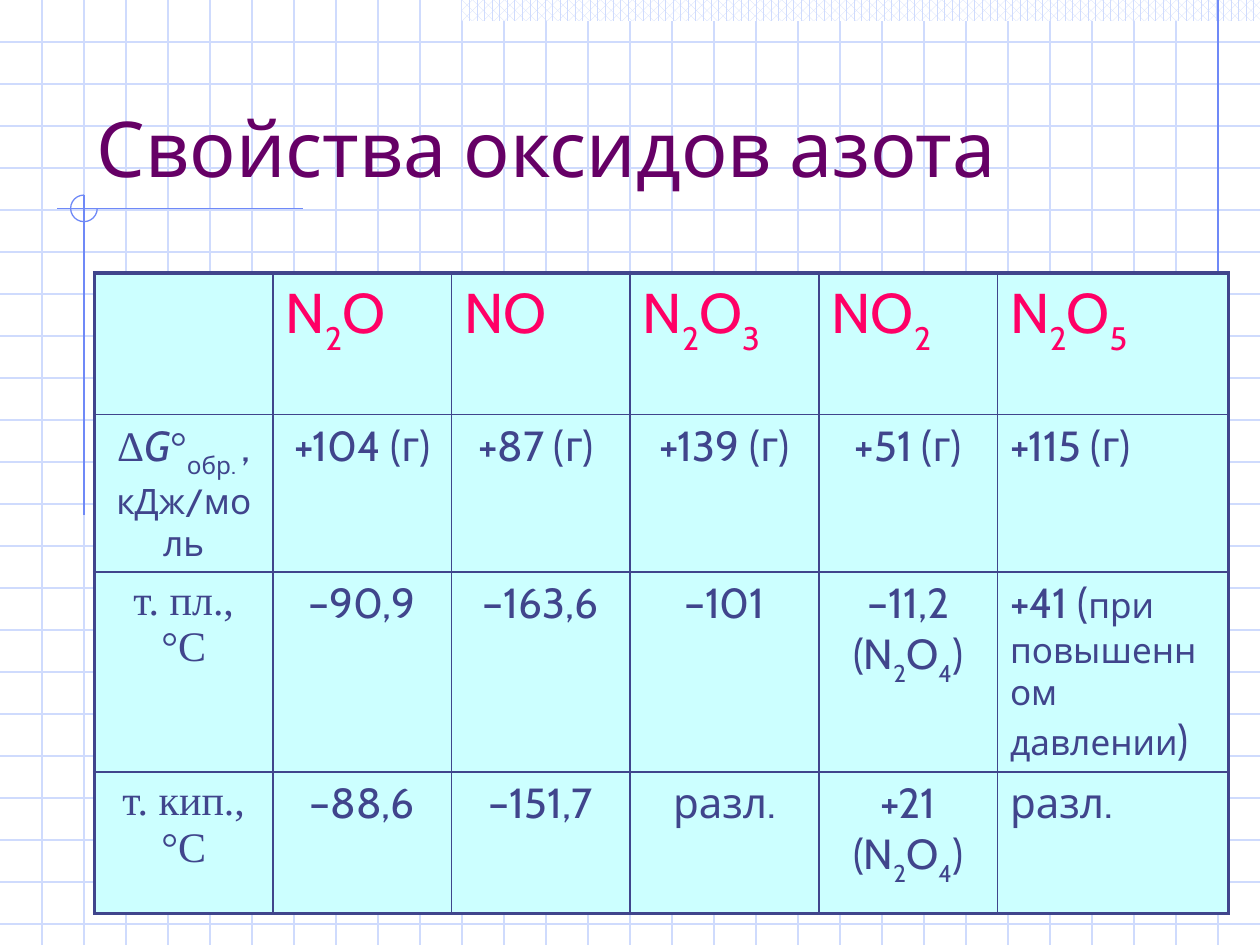
"""Build a slide with a table of the properties of nitrogen oxides."""
from typing import NamedTuple

import lxml.etree
import pptx
import pptx.dml.color
import pptx.enum.dml
import pptx.enum.shapes
import pptx.enum.text
import pptx.oxml.ns
import pptx.util

Pt = pptx.util.Pt
RGB = pptx.dml.color.RGBColor
qn = pptx.oxml.ns.qn
Align = pptx.enum.text.PP_ALIGN
Shape = pptx.enum.shapes.MSO_SHAPE

WHITE = RGB(0xFF, 0xFF, 0xFF)
PALE = RGB(0xCF, 0xDB, 0xFD)
BLUE = RGB(0x6F, 0x89, 0xF7)
PLUM = RGB(0x66, 0x00, 0x66)
PINK = RGB(0xFF, 0x00, 0x66)
NAVY = RGB(0x40, 0x45, 0x8C)
CYAN = RGB(0xCC, 0xFF, 0xFF)

SANS = "Cabin"
SERIF = "Times New Roman"
THIN = 1
THICK = 2.25
WIDE, HIGH, STEP = 720, 540, 24


class Bit(NamedTuple):
    text: str
    size: float = 24
    face: str = SANS
    sub: bool = False
    slant: bool = False


class Rule(NamedTuple):
    x1: float
    y1: float
    x2: float
    y2: float


def chem(text: str, size: float = 24) -> list[Bit]:
    """Split a formula into letters and lowered digits."""
    return [Bit(sign, size, sub=sign.isdigit()) for sign in text]


GRID = [Rule(0, y, WIDE, y) for y in range(STEP, HIGH, STEP)]
GRID += [Rule(x, 0, x, HIGH) for x in range(STEP, WIDE, STEP)]
RULES = [
    Rule(696, 0, 696, 186),
    Rule(173, 119.3, 32.5, 119.3),
    Rule(48, 111.5, 48, 294.5),
]
COLS = [102, 102, 102, 108, 102, 132]
ROWS = [81, 84, 88.5, 81]
DIMER = chem("N2O4") + [Bit(")")]
CELLS = [
    [[]] + [chem(name, 32) for name in ("N2O", "NO", "N2O3", "NO2", "N2O5")],
    [
        [
            Bit("Δ", face=SERIF), Bit("G", slant=True), Bit("°", face=SERIF),
            Bit("обр. ", sub=True), Bit(", "), Bit("кДж/моль", 20),
        ],
        [Bit("+104 (г)")], [Bit("+87 (г) ")], [Bit("+139 (г)")],
        [Bit("+51 (г)")], [Bit("+115 (г)")],
    ],
    [
        [Bit("т. пл., °С", face=SERIF)],
        [Bit("–90,9")], [Bit("–163,6")], [Bit("–101")],
        [Bit("–11,2 (")] + DIMER,
        [Bit("+41 ("), Bit("при повышенном давлении", 20), Bit(")")],
    ],
    [
        [Bit("т. кип., °С", face=SERIF)],
        [Bit("–88,6")], [Bit("–151,7")], [Bit("разл.")],
        [Bit("+21 (")] + DIMER,
        [Bit("разл.")],
    ],
]


def draw_rule(slide, rule: Rule, color: RGB) -> None:
    """Draw one thin line."""
    line = slide.shapes.add_connector(
        pptx.enum.shapes.MSO_CONNECTOR.STRAIGHT, *map(Pt, rule))
    line.line.color.rgb = color
    line.line.width = Pt(0.75)
    lxml.etree.SubElement(line._element.spPr, qn("a:effectLst"))


def draw_decor(slide) -> None:
    """Draw the grid, the top band, the rules and the open ring."""
    for rule in GRID:
        draw_rule(slide, rule, PALE)
    band = slide.shapes.add_shape(Shape.RECTANGLE, Pt(264), 0, Pt(456), Pt(12))
    band.shadow.inherit = False
    band.fill.patterned()
    band.fill.pattern = pptx.enum.dml.MSO_PATTERN.PERCENT_60
    band.fill.fore_color.rgb = PALE
    band.fill.back_color.rgb = WHITE
    band.line.fill.background()
    for rule in RULES:
        draw_rule(slide, rule, BLUE)
    ring = slide.shapes.add_shape(
        Shape.ARC, Pt(40.4), Pt(111.5), Pt(15.2), Pt(15.2))
    ring.adjustments[0] = 0
    ring.adjustments[1] = 162
    ring.shadow.inherit = False
    ring.fill.background()
    ring.line.color.rgb = BLUE
    ring.line.width = Pt(0.75)


def draw_title(slide, text: str) -> None:
    """Place and format the title."""
    title = slide.shapes.title
    title.left, title.top = Pt(48), Pt(24)
    title.width, title.height = Pt(612), Pt(90)
    frame = title.text_frame
    frame.text = text
    frame.word_wrap = True
    frame.auto_size = pptx.enum.text.MSO_AUTO_SIZE.NONE
    frame.vertical_anchor = pptx.enum.text.MSO_ANCHOR.BOTTOM
    para = frame.paragraphs[0]
    para.alignment = Align.LEFT
    font = para.runs[0].font
    font.name, font.size, font.color.rgb = SANS, Pt(44), PLUM
    tree = title._element.getparent()
    tree.remove(title._element)
    tree.append(title._element)


def set_edge(cell, side: str, width: float) -> None:
    """Give one side of a cell a solid border."""
    props = cell._tc.get_or_add_tcPr()
    edge = lxml.etree.SubElement(props, qn(f"a:ln{side}"), w=str(Pt(width)))
    fill = lxml.etree.SubElement(edge, qn("a:solidFill"))
    lxml.etree.SubElement(fill, qn("a:srgbClr"), val=str(NAVY))


def fill_cell(cell, bits: list[Bit], color: RGB, align: Align) -> None:
    """Write the runs of one cell."""
    para = cell.text_frame.paragraphs[0]
    para.alignment = align
    for bit in bits:
        run = para.add_run()
        run.text = bit.text
        font = run.font
        font.name, font.size, font.color.rgb = bit.face, Pt(bit.size), color
        font.italic = bit.slant
        if bit.sub:
            run._r.get_or_add_rPr().set("baseline", "-30000")


def draw_table(slide) -> None:
    """Draw the table of properties."""
    table = slide.shapes.add_table(
        len(ROWS), len(COLS), Pt(54), Pt(156),
        Pt(sum(COLS)), Pt(sum(ROWS))).table
    table.first_row = table.horz_banding = False
    for col, width in zip(table.columns, COLS):
        col.width = Pt(width)
    for row, height in zip(table.rows, ROWS):
        row.height = Pt(height)
    end, last = len(ROWS) - 1, len(COLS) - 1
    for y, line in enumerate(CELLS):
        for x, bits in enumerate(line):
            cell = table.cell(y, x)
            outer = {"L": x == 0, "R": x == last, "T": y == 0, "B": y == end}
            for side, bold in outer.items():
                set_edge(cell, side, THICK if bold else THIN)
            cell.fill.solid()
            cell.fill.fore_color.rgb = CYAN
            left = y == 0 or x == last
            fill_cell(cell, bits, NAVY if y else PINK,
                      Align.LEFT if left else Align.CENTER)


def main() -> None:
    """Build and save the slide."""
    deck = pptx.Presentation()
    deck.slide_width, deck.slide_height = Pt(WIDE), Pt(HIGH)
    slide = deck.slides.add_slide(deck.slide_layouts[5])
    draw_decor(slide)
    draw_title(slide, "Свойства оксидов азота")
    draw_table(slide)
    deck.save("out.pptx")


if __name__ == "__main__":
    main()
